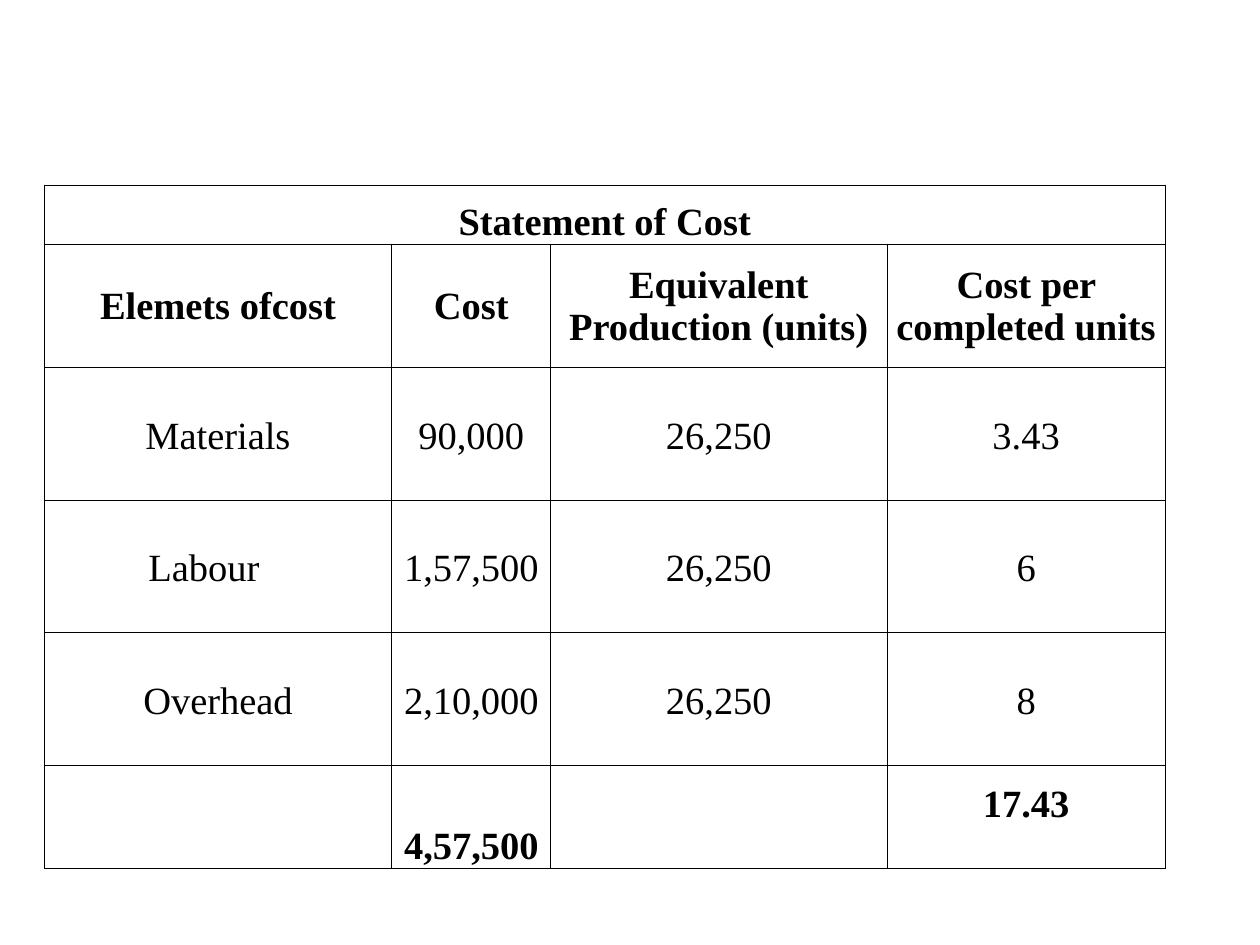
from lxml import etree
from pptx import Presentation
from pptx.dml.color import RGBColor
from pptx.enum.text import MSO_ANCHOR as Anchor, PP_ALIGN as Align
from pptx.oxml import parse_xml
from pptx.oxml.ns import nsdecls
from pptx.util import Cm, Pt


def write(cell, text, bold=False, anchor=Anchor.BOTTOM, right=0.03, bottom=0):
    cell.vertical_anchor = anchor
    cell.margin_left = cell.margin_top = Cm(0.03)
    cell.margin_right, cell.margin_bottom = Cm(right), Cm(bottom)
    para = cell.text_frame.paragraphs[0]
    para.alignment = Align.CENTER
    if text:
        run = para.add_run()
        run.text = text
        font = run.font
        font.name, font.size, font.bold = "Times New Roman", Pt(22), bold
        font.color.rgb = RGBColor.from_string("000000")


def frame(cell, color="000000", width=0.5):
    """Clear the cell's fill and rule all four sides."""
    cell.fill.background()
    props = cell._tc.get_or_add_tcPr()
    for pos, side in enumerate("LRTB"):
        props.insert(pos, parse_xml(
            f'<a:ln{side} {nsdecls("a")} w="{Pt(width)}"><a:solidFill>'
            f'<a:srgbClr val="{color}"/></a:solidFill></a:ln{side}>'))


prs = Presentation()
prs.slide_width, prs.slide_height = Cm(25.4), Cm(19.05)
slide = prs.slides.add_slide(prs.slide_layouts[6])

heads = ["Elemets ofcost", "Cost", "Equivalent Production (units)",
         "Cost per completed units"]
costs = [
    ["Materials", "90,000", "26,250", "3.43"],
    ["Labour", "1,57,500", "26,250", "6"],
    ["Overhead", "2,10,000", "26,250", "8"],
]
totals = ["", "4,57,500", "", "17.43"]
widths = [7.01, 3.2, 6.78, 5.61]
heights = [1.19, 2.49] + [2.67] * 3 + [2.08]
lift = 0.85  # one line of space under the text

table = slide.shapes.add_table(len(heights), len(widths), Cm(0.89), Cm(3.73),
                               Cm(sum(widths)), Cm(sum(heights))).table
table.first_row = table.horz_banding = False
for col, width in zip(table.columns, widths):
    col.width = Cm(width)
for row, height in zip(table.rows, heights):
    row.height = Cm(height)
for cell in table.iter_cells():
    frame(cell)

table.cell(0, 0).merge(table.cell(0, 3))
write(table.cell(0, 0), "Statement of Cost", bold=True)
for col, text in enumerate(heads):
    write(table.cell(1, col), text, bold=True, anchor=Anchor.MIDDLE)
for row, line in enumerate(costs, 2):
    for col, text in enumerate(line):
        right = 0.6 if text == "Labour" else 0.03
        write(table.cell(row, col), text, right=right, bottom=lift)
for col, text in enumerate(totals):
    write(table.cell(5, col), text, bold=True, bottom=lift if col == 3 else 0)

prs.save("out.pptx")
